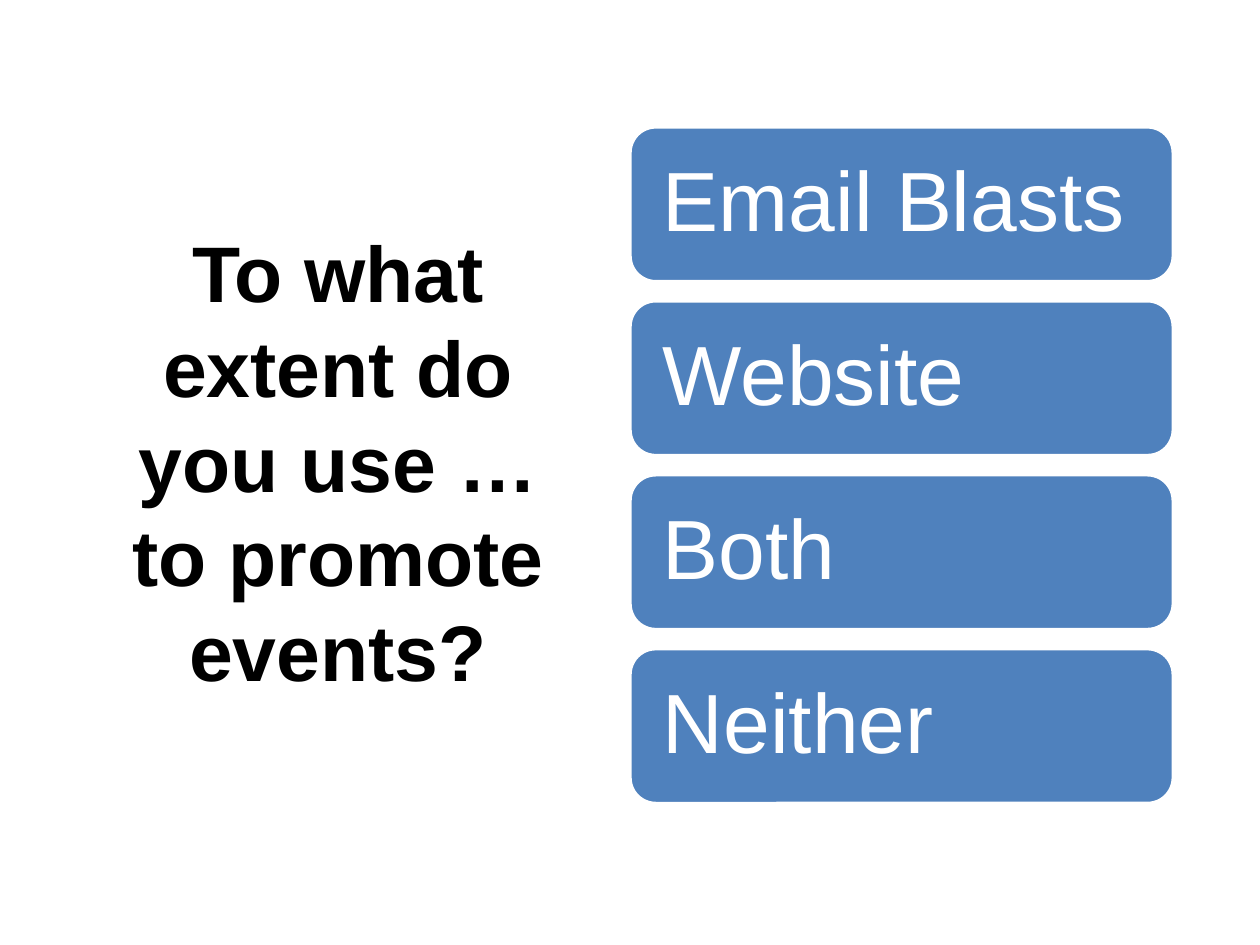
from dataclasses import dataclass

from pptx import Presentation
from pptx.dml.color import RGBColor
from pptx.enum.shapes import MSO_SHAPE
from pptx.enum.text import MSO_ANCHOR, PP_ALIGN
from pptx.slide import Slide
from pptx.text.text import TextFrame
from pptx.util import Pt

FONT = "Arial"
BLACK, WHITE, BLUE = "000000", "FFFFFF", "4F81BD"

# Answer stack, in points
ANSWER_LEFT, ANSWER_TOP = 360, 72.5
ANSWER_WIDTH, ANSWER_HEIGHT = 310.5, 88.5
ANSWER_PITCH = 99.4
ANSWER_INSET = 14.5  # the rounded corners add about 4 points more


@dataclass
class TextStyle:
    size: float
    color: str
    bold: bool
    alignment: PP_ALIGN
    line_spacing: float


QUESTION_STYLE = TextStyle(45, BLACK, True, PP_ALIGN.CENTER, 1.0)
ANSWER_STYLE = TextStyle(48, WHITE, False, PP_ALIGN.LEFT, 0.9)


def color(value: str) -> RGBColor:
    return RGBColor.from_string(value)


def write_text(frame: TextFrame, text: str, style: TextStyle) -> None:
    frame.word_wrap = True
    frame.vertical_anchor = MSO_ANCHOR.MIDDLE
    paragraph = frame.paragraphs[0]
    paragraph.text = text
    paragraph.alignment = style.alignment
    paragraph.line_spacing = style.line_spacing
    paragraph.font.name = FONT
    paragraph.font.size = Pt(style.size)
    paragraph.font.bold = style.bold
    paragraph.font.color.rgb = color(style.color)


def add_question(slide: Slide, text: str) -> None:
    box = slide.shapes.add_textbox(Pt(49.5), Pt(43.9), Pt(287.3), Pt(438.5))
    write_text(box.text_frame, text, QUESTION_STYLE)


def add_answer(slide: Slide, text: str, row: int) -> None:
    shape = slide.shapes.add_shape(
        MSO_SHAPE.ROUNDED_RECTANGLE,
        Pt(ANSWER_LEFT), Pt(ANSWER_TOP + row * ANSWER_PITCH),
        Pt(ANSWER_WIDTH), Pt(ANSWER_HEIGHT),
    )
    shape.shadow.inherit = False
    shape.fill.solid()
    shape.fill.fore_color.rgb = color(BLUE)
    shape.line.color.rgb = color(WHITE)
    shape.line.width = Pt(2)
    frame = shape.text_frame
    frame.margin_left = frame.margin_right = Pt(ANSWER_INSET)
    frame.margin_top = frame.margin_bottom = Pt(ANSWER_INSET)
    write_text(frame, text, ANSWER_STYLE)


def main() -> None:
    presentation = Presentation()
    presentation.slide_width, presentation.slide_height = Pt(720), Pt(540)
    slide = presentation.slides.add_slide(presentation.slide_layouts[6])

    # Question on the left
    add_question(slide, "To what extent do you use … to promote events?")

    # Answers stacked on the right
    for row, answer in enumerate(("Email Blasts", "Website", "Both", "Neither")):
        add_answer(slide, answer, row)

    presentation.save("out.pptx")


if __name__ == "__main__":
    main()
